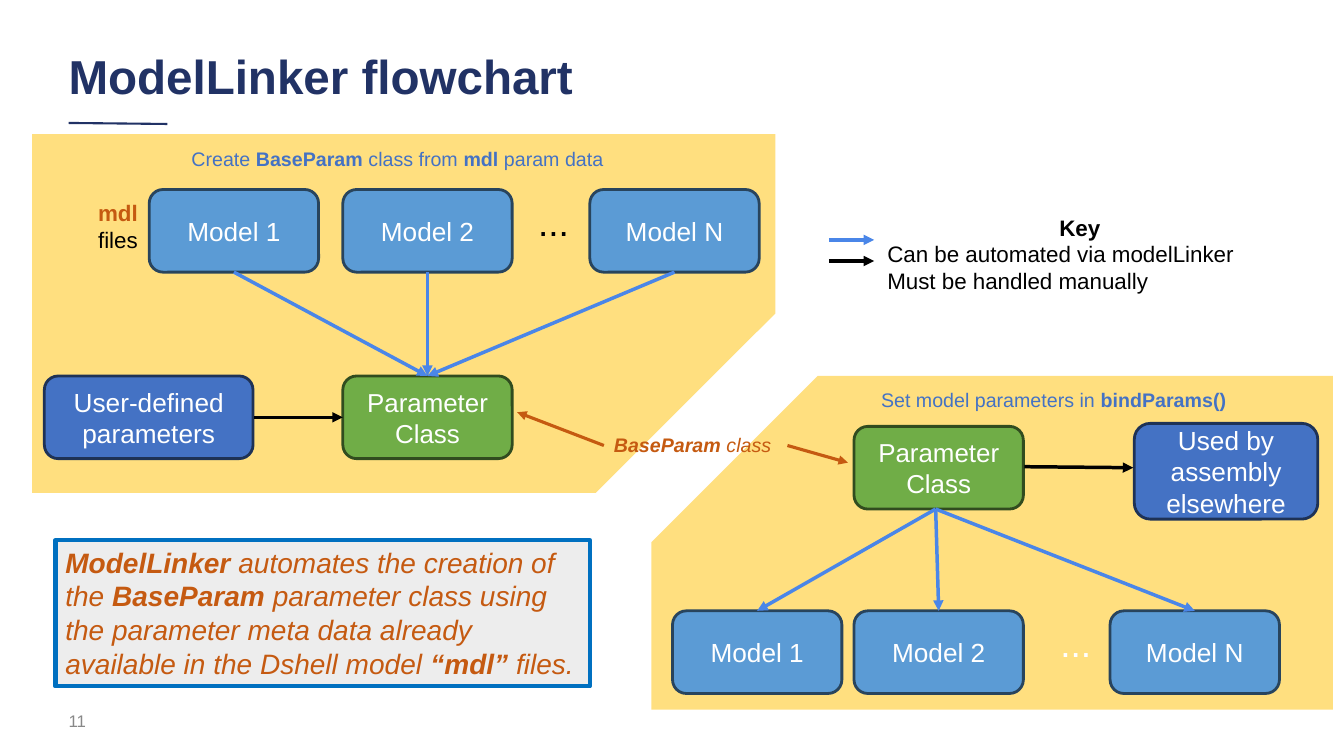
from lxml import etree
from pptx import Presentation
from pptx import util as u
from pptx.dml.color import RGBColor
from pptx.enum import shapes, text
from pptx.oxml.ns import qn

COLORS = {
    "navy": "213265", "panel": "FFC000", "model": "5B9BD5", "model_edge": "28445D",
    "user": "4472C4", "user_edge": "1E3256", "param": "70AD47", "param_edge": "314C1F",
    "auto": "4A86E8", "black": "000000", "white": "FFFFFF", "grey": "888888",
    "rust": "C55A11", "note": "EDEDED", "note_edge": "0070C0",
}
CENTER = text.PP_ALIGN.CENTER
LEFT = text.PP_ALIGN.LEFT
TOP = text.MSO_ANCHOR.TOP
MIDDLE = text.MSO_ANCHOR.MIDDLE
BOX_WIDTH, BOX_HEIGHT = 1.68, 0.82


def rgb(name):
    return RGBColor.from_string(COLORS[name])


def write(frame, content, size=18, color="black", italic=False, align=LEFT,
          anchor=TOP, inset=(0.1, 0.05), spacing=None):
    frame.word_wrap = True
    frame.auto_size = text.MSO_AUTO_SIZE.NONE
    frame.vertical_anchor = anchor
    frame.margin_left = frame.margin_right = u.Inches(inset[0])
    frame.margin_top = frame.margin_bottom = u.Inches(inset[1])
    for index, line in enumerate(content.split("\n")):
        para = frame.paragraphs[0] if index == 0 else frame.add_paragraph()
        para.alignment = align
        if spacing:
            para.line_spacing = spacing
        for part, words in enumerate(line.split("**")):
            if words:
                span = para.add_run()
                span.text = words
                span.font.name = "Arial"
                span.font.size = u.Pt(size)
                span.font.bold = part % 2 == 1
                span.font.italic = italic
                span.font.color.rgb = rgb(color)


class FlowSlide:
    def __init__(self, deck):
        self.page = deck.slides.add_slide(deck.slide_layouts[5])
        self.shapes = self.page.shapes

    def title(self, content, left, top, width, height):
        box = self.shapes.title
        box.left, box.top = u.Inches(left), u.Inches(top)
        box.width, box.height = u.Inches(width), u.Inches(height)
        write(box.text_frame, content, size=34, color="navy", inset=(0.13, 0.07), spacing=0.9)

    def panel(self, points):
        builder = self.shapes.build_freeform(
            u.Inches(points[0][0]), u.Inches(points[0][1]), scale=1.0)
        builder.add_line_segments([(u.Inches(x), u.Inches(y)) for x, y in points[1:]])
        panel = builder.convert_to_shape()
        panel.shadow.inherit = False
        panel.fill.solid()
        panel.fill.fore_color.rgb = rgb("panel")
        panel.line.fill.background()
        color = panel.fill._xPr.find(qn("a:solidFill"))[0]
        etree.SubElement(color, qn("a:alpha"), val="50000")

    def label(self, content, left, top, width, height, **style):
        box = self.shapes.add_textbox(*map(u.Inches, (left, top, width, height)))
        write(box.text_frame, content, **style)
        return box

    def shape(self, kind, left, top, width, height, fill, edge, weight):
        box = self.shapes.add_shape(kind, *map(u.Inches, (left, top, width, height)))
        box.shadow.inherit = False
        box.fill.solid()
        box.fill.fore_color.rgb = rgb(fill)
        box.line.color.rgb = rgb(edge)
        box.line.width = u.Pt(weight)
        return box

    def node(self, content, left, top, kind, width=BOX_WIDTH, height=BOX_HEIGHT, size=18.7):
        box = self.shape(shapes.MSO_SHAPE.ROUNDED_RECTANGLE, left, top, width, height,
                         kind, kind + "_edge", 2)
        write(box.text_frame, content, size=size, color="white", align=CENTER,
              anchor=MIDDLE, inset=(0.13, 0.13))

    def note(self, content, left, top, width, height):
        box = self.shape(shapes.MSO_SHAPE.RECTANGLE, left, top, width, height,
                         "note", "note_edge", 3)
        write(box.text_frame, content, size=20, color="rust", italic=True)

    def line(self, start, end, color, weight=2.5, arrow=True):
        line = self.shapes.add_connector(
            shapes.MSO_CONNECTOR.STRAIGHT, *map(u.Inches, (*start, *end)))
        line.line.color.rgb = rgb(color)
        line.line.width = u.Pt(weight)
        if arrow:
            etree.SubElement(line.line._get_or_add_ln(), qn("a:tailEnd"), type="triangle")
        etree.SubElement(line._element.spPr, qn("a:effectLst"))

    def models(self, lefts, top, dots_left, dots_color):
        for name, left in zip(("Model 1", "Model 2", "Model N"), lefts):
            self.node(name, left, top, "model")
        self.label("...", dots_left, top + 0.06, 0.92, 0.51, size=26.5, color=dots_color,
                   align=CENTER, anchor=MIDDLE, inset=(0.13, 0.13))


def main():
    deck = Presentation()
    deck.slide_width, deck.slide_height = u.Inches(13.33), u.Inches(7.5)
    slide = FlowSlide(deck)

    slide.line((0.68, 1.22), (1.66, 1.23), "navy", 1.5, arrow=False)
    slide.panel([(8.11, 3.73), (13.22, 3.73), (13.22, 7.04), (6.46, 7.04), (6.46, 5.38)])
    slide.panel([(0.32, 1.33), (7.69, 1.33), (7.69, 3.11), (5.91, 4.89), (0.32, 4.89)])
    slide.title("**ModelLinker flowchart**", 0.55, 0.46, 11.12, 0.76)
    slide.label("11", 0.55, 6.95, 3, 0.4, size=12, color="grey", anchor=MIDDLE,
                inset=(0.13, 0.07))

    create_lefts, create_top, class_top = (1.48, 3.4, 5.85), 1.88, 3.73
    slide.models(create_lefts, create_top, 5.03, "black")
    slide.node("User-defined parameters", 0.44, class_top, "user", width=2.07)
    slide.node("Parameter Class", create_lefts[1], class_top, "param", size=18.5)
    class_center = create_lefts[1] + BOX_WIDTH / 2
    for left in create_lefts:
        slide.line((left + BOX_WIDTH / 2, create_top + BOX_HEIGHT),
                   (class_center, class_top), "auto")
    slide.line((2.52, 4.14), (3.4, 4.14), "black")

    for y, color in ((2.38, "auto"), (2.59, "black")):
        slide.line((8.22, y), (8.67, y), color)
    key = slide.label("**Key**\nCan be automated via modelLinker\nMust be handled manually",
                      8.67, 1.99, 4.08, 1.06, size=16, inset=(0.13, 0.13))
    key.text_frame.paragraphs[0].alignment = CENTER

    bind_lefts, bind_top, bound_top = (6.67, 8.47, 11.01), 6.06, 4.23
    slide.node("Parameter Class", bind_lefts[1], bound_top, "param", size=18.5)
    slide.models(bind_lefts, bind_top, 10.21, "white")
    for left in bind_lefts:
        slide.line((9.28, bound_top + BOX_HEIGHT), (left + BOX_WIDTH / 2, bind_top), "auto")
    slide.node("Used by assembly elsewhere", 11.25, 4.2, "user", width=1.82, height=0.95)
    slide.line((10.16, 4.63), (11.24, 4.64), "black")

    files = slide.label("**mdl **", 0.66, 1.93, 1.02, 0.64, size=16, color="rust", align=CENTER)
    span = files.text_frame.paragraphs[0].add_run()
    span.text = "files"
    span.font.name, span.font.size = "Arial", u.Pt(16)
    span.font.color.rgb = rgb("black")

    slide.label("Create **BaseParam** class from **mdl** param data",
                1.8, 1.41, 5.68, 0.34, size=14, color="user")
    slide.label("Set model parameters in **bindParams()**",
                8.64, 3.8, 4.34, 0.34, size=14, color="user")
    slide.label("**BaseParam** class", 5.99, 4.25, 1.81, 0.34, size=14, color="rust", italic=True)
    slide.line((5.99, 4.42), (5.13, 4.09), "rust", 2.25)
    slide.line((7.81, 4.42), (8.41, 4.59), "rust", 2.25)
    slide.note("**ModelLinker** automates the creation of the **BaseParam** parameter class "
               "using the parameter meta data already available in the Dshell model "
               "**“mdl” **files.", 0.55, 5.36, 5.3, 1.45)

    deck.save("out.pptx")


if __name__ == "__main__":
    main()
